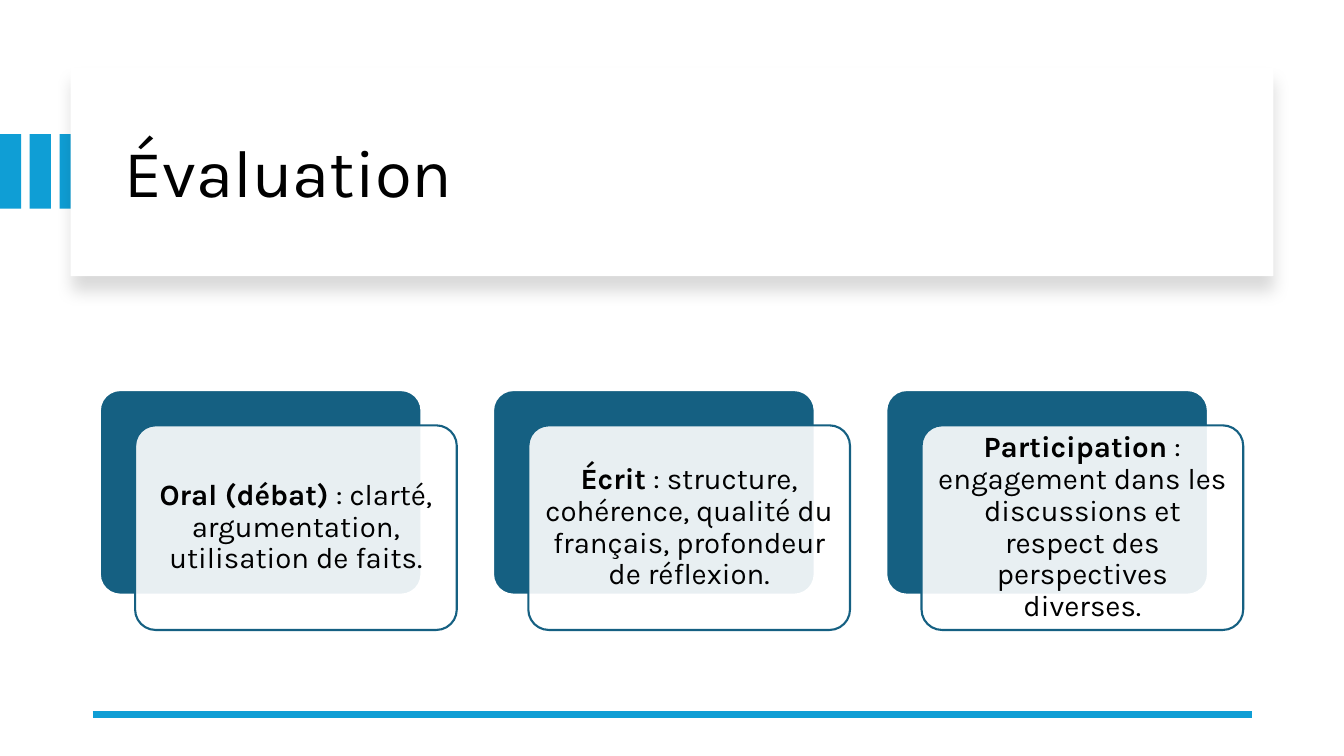
from dataclasses import dataclass

from lxml.etree import SubElement
from pptx import Presentation
from pptx.dml.color import RGBColor
from pptx.enum.shapes import MSO_CONNECTOR, MSO_SHAPE
from pptx.enum.text import MSO_ANCHOR, PP_ALIGN
from pptx.oxml.ns import qn
from pptx.util import Inches, Pt


@dataclass(frozen=True)
class Theme:
    font: str = "Karla"
    accent: str = "0F9ED5"
    card: str = "156082"
    paper: str = "FFFFFF"
    ink: str = "000000"
    title_size: int = 48
    body_size: int = 21


THEME = Theme()

CRITERIA = [
    ("Oral (débat)", " : clarté, argumentation, utilisation de faits."),
    ("Écrit", " : structure, cohérence, qualité du français, profondeur de réflexion."),
    ("Participation", " : engagement dans les discussions et respect des perspectives diverses."),
]


def add_box(slide, kind, left, top, width, height, fill, line=None, opacity=100):
    sp = slide.shapes.add_shape(kind, Inches(left), Inches(top), Inches(width), Inches(height))
    sp.shadow.inherit = False
    sp.fill.solid()
    sp.fill.fore_color.rgb = RGBColor.from_string(fill)
    if opacity < 100:
        color = sp.fill._xPr.find(qn("a:solidFill"))[0]
        SubElement(color, qn("a:alpha"), val=str(opacity * 1000))
    if line:
        sp.line.color.rgb = RGBColor.from_string(line)
        sp.line.width = Pt(1.5)
    else:
        sp.line.fill.background()
    return sp


def add_shadow(sp, color, opacity, blur, distance, angle):
    effects = sp._element.spPr.find(qn("a:effectLst"))
    shadow = SubElement(effects, qn("a:outerShdw"), blurRad=str(Pt(blur)), dist=str(Pt(distance)),
                        dir=str(angle * 60000), algn="t", rotWithShape="0")
    clr = SubElement(shadow, qn("a:srgbClr"), val=color)
    SubElement(clr, qn("a:alpha"), val=str(opacity * 1000))


def add_text(slide, runs, left, top, width, height, *, size, align=PP_ALIGN.LEFT, inset=0.1):
    """Add a wrapped text box; runs are (text, bold) pairs."""
    box = slide.shapes.add_textbox(Inches(left), Inches(top), Inches(width), Inches(height))
    tf = box.text_frame
    tf.word_wrap = True
    tf.vertical_anchor = MSO_ANCHOR.MIDDLE
    tf.margin_left = tf.margin_right = Inches(inset)
    tf.margin_top = tf.margin_bottom = Inches(min(inset, 0.09))
    p = tf.paragraphs[0]
    p.alignment = align
    p.line_spacing = 0.9
    for text, bold in runs:
        r = p.add_run()
        r.text = text
        r.font.name = THEME.font
        r.font.size = Pt(size)
        r.font.bold = bold
        r.font.color.rgb = RGBColor.from_string(THEME.ink)


def add_rule(slide, left, right, y):
    line = slide.shapes.add_connector(MSO_CONNECTOR.STRAIGHT,
                                      Inches(left), Inches(y), Inches(right), Inches(y))
    line.line.color.rgb = RGBColor.from_string(THEME.accent)
    line.line.width = Pt(4.5)
    SubElement(line._element.spPr, qn("a:effectLst"))


def add_title_banner(slide, title):
    for i in range(3):
        add_box(slide, MSO_SHAPE.RECTANGLE, i * 0.295, 1.33, 0.21, 0.74, THEME.accent)
    panel = add_box(slide, MSO_SHAPE.RECTANGLE, 0.7, 0.67, 11.93, 2.07, THEME.paper)
    add_shadow(panel, THEME.ink, opacity=15, blur=11, distance=10, angle=90)
    add_text(slide, [(title, False)], 1.14, 0.89, 11.13, 1.7, size=THEME.title_size)


def add_card(slide, left, top, name, detail):
    width, height, offset, pad = 3.19, 2.03, 0.35, 0.06
    back = add_box(slide, MSO_SHAPE.ROUNDED_RECTANGLE, left, top, width, height,
                   THEME.card, line=THEME.paper)
    front = add_box(slide, MSO_SHAPE.ROUNDED_RECTANGLE, left + offset, top + offset, width, height,
                    THEME.paper, line=THEME.card, opacity=90)
    for sp in (back, front):
        sp.adjustments[0] = 0.1
    inner = offset + pad
    add_text(slide, [(name, True), (detail, False)], left + inner, top + inner,
             width - 2 * pad, height - 2 * pad,
             size=THEME.body_size, align=PP_ALIGN.CENTER, inset=0.09)


def main():
    prs = Presentation()
    prs.slide_width, prs.slide_height = Inches(13.33), Inches(7.5)
    s = prs.slides.add_slide(prs.slide_layouts[6])

    # Title banner and bottom rule
    add_title_banner(s, "Évaluation")
    add_rule(s, 0.92, 12.42, 7.09)

    # One card per criterion
    for i, (name, detail) in enumerate(CRITERIA):
        add_card(s, 0.99 + i * 3.9, 3.87, name, detail)

    prs.save("out.pptx")


if __name__ == "__main__":
    main()
